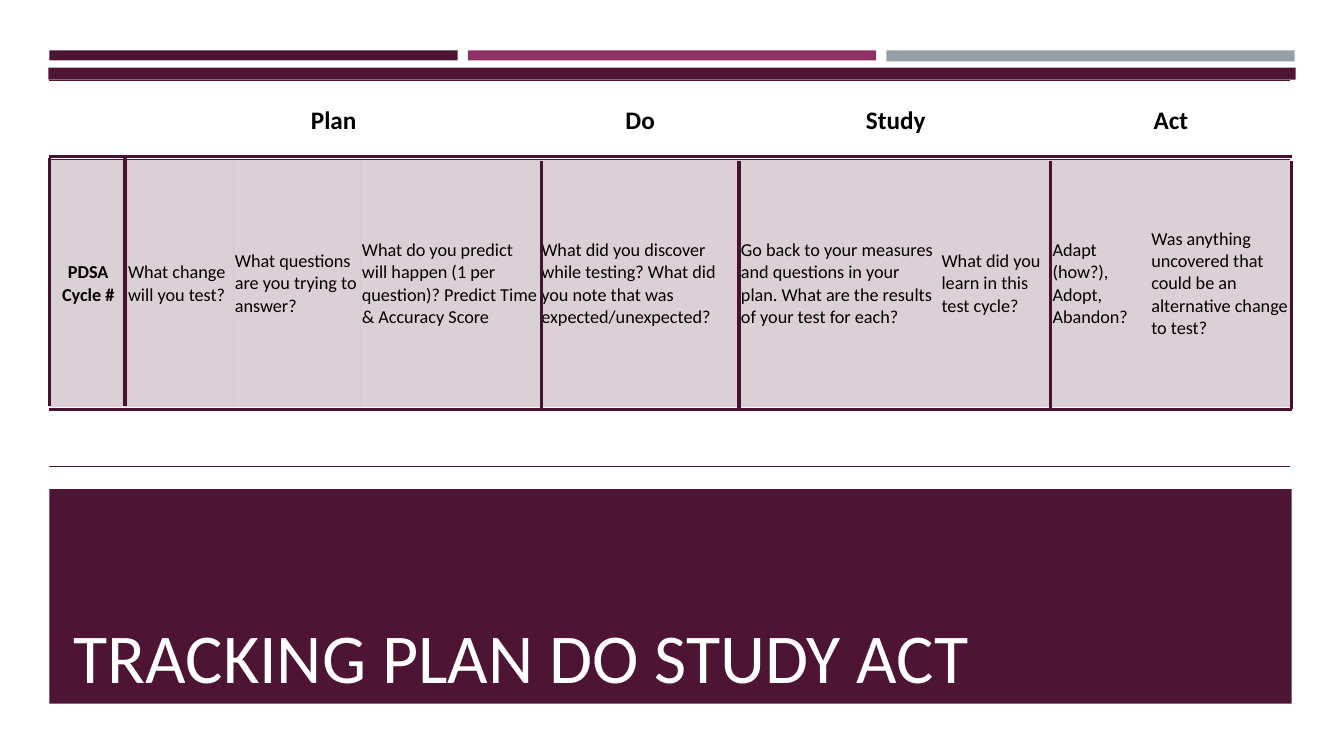
"""Build the Plan Do Study Act tracking slide."""
from typing import Any, NamedTuple

from lxml import etree
from pptx import Presentation
from pptx import util as u
from pptx.dml.color import RGBColor
from pptx.enum import shapes, text
from pptx.oxml.ns import qn

PLUM = RGBColor(0x4D, 0x14, 0x34)
RULE = RGBColor(0x45, 0x12, 0x2F)
BERRY = RGBColor(0x90, 0x31, 0x63)
GREY = RGBColor(0x96, 0x9F, 0xA7)
WHITE = RGBColor(0xFF, 0xFF, 0xFF)
BLACK = RGBColor(0, 0, 0)
FONT = "Calibri"
NO_STYLE = "{2D5ABB26-0587-4C30-8999-92F81FD0307C}"
LEFT, RIGHT = 0.49, 12.81


class Block(NamedTuple):
    x: float
    y: float
    w: float
    h: float
    color: RGBColor


class Rule(NamedTuple):
    x1: float
    y1: float
    x2: float
    y2: float


class Stage(NamedTuple):
    name: str
    column: int
    span: int


BLOCKS = [
    Block(0.48, 0.67, 12.37, 1.3, PLUM),
    Block(LEFT, 0.5, 4.05, 0.1, PLUM),
    Block(8.79, 0.5, 4.05, 0.11, GREY),
    Block(4.64, 0.5, 4.05, 0.1, BERRY),
    Block(LEFT, 3.37, 12.32, 3.61, PLUM),
    Block(0, 0.79, 13.33, 4.06, WHITE),
]
RULES = [
    *[Rule(x, 1.57, x, 4.03) for x in (LEFT, 1.24)],
    *[Rule(x, 1.6, x, 4.06) for x in (5.37, 7.33, 10.42, RIGHT)],
    *[Rule(RIGHT, y, LEFT, y) for y in (1.55, 4.06)],
]
STAGES = [Stage("Plan", 1, 3), Stage("Do", 4, 1), Stage("Study", 5, 2), Stage("Act", 7, 2)]
QUESTIONS = [
    "PDSA Cycle #",
    "What change will you test?",
    "What questions are you trying to answer?",
    "What do you predict will happen (1 per question)? Predict Time & Accuracy Score",
    "What did you discover while testing? What did you note that was expected/unexpected?",
    "Go back to your measures and questions in your plan. What are the results of your test for each?",
    "What did you learn in this test cycle?",
    "Adapt (how?), Adopt, Abandon?",
    "Was anything uncovered that could be an alternative change to test?",
]
COLUMNS = [0.77, 1.06, 1.26, 1.78, 1.98, 1.99, 1.1, 0.98, 1.39]
ROWS = [0.78, 2.46, 0.59]
BORDERS = {0: ("a:lnB", "a:lnT"), 1: (), 2: ("a:lnB",)}
CELL_FORMAT = {
    "vertical_anchor": text.MSO_ANCHOR.MIDDLE,
    "margin_left": u.Inches(0.01),
    "margin_right": u.Inches(0.01),
    "margin_top": u.Inches(0.01),
    "margin_bottom": 0,
}


def apply(target: Any, values: dict[str, Any]) -> None:
    for name, value in values.items():
        setattr(target, name, value)


def write(p: Any, words: str, size: float, color: RGBColor, bold: bool = False) -> None:
    r = p.add_run()
    r.text = words
    apply(r.font, {"name": FONT, "size": u.Pt(size), "bold": bold})
    r.font.color.rgb = color


def add_block(s: Any, block: Block) -> None:
    sp = s.shapes.add_shape(shapes.MSO_SHAPE.RECTANGLE, *map(u.Inches, block[:4]))
    sp.shadow.inherit = False
    sp.fill.solid()
    sp.fill.fore_color.rgb = block.color
    sp.line.fill.background()


def add_rule(s: Any, rule: Rule) -> None:
    line = s.shapes.add_connector(shapes.MSO_CONNECTOR.STRAIGHT, *map(u.Inches, rule))
    line.line.color.rgb = RULE
    line.line.width = u.Pt(2.25)
    etree.SubElement(line._element.spPr, qn("a:effectLst"))


def add_border(cell: Any, side: str) -> None:
    ln = etree.Element(qn(side), w=str(u.Pt(1)))
    fill = etree.SubElement(ln, qn("a:solidFill"))
    etree.SubElement(fill, qn("a:srgbClr"), val=str(PLUM))
    cell._tc.get_or_add_tcPr().insert(0, ln)


def tint(cell: Any) -> None:
    cell.fill.solid()
    cell.fill.fore_color.rgb = PLUM
    color = cell._tc.tcPr.find(".//" + qn("a:srgbClr"))
    etree.SubElement(color, qn("a:alpha"), val="20000")


def fill_cell(cell: Any, words: str, size: float, bold: bool, centred: bool) -> None:
    p = cell.text_frame.paragraphs[0]
    p.alignment = text.PP_ALIGN.CENTER if centred else text.PP_ALIGN.LEFT
    write(p, words, size, BLACK, bold)


def add_tracker(s: Any) -> None:
    box = map(u.Inches, (LEFT, 0.8, sum(COLUMNS), sum(ROWS)))
    table = s.shapes.add_table(len(ROWS), len(COLUMNS), *box).table
    apply(table, {"first_row": False, "horz_banding": False})
    table._tbl.tblPr.find(qn("a:tableStyleId")).text = NO_STYLE
    for column, width in zip(table.columns, COLUMNS):
        column.width = u.Inches(width)
    for i, height in enumerate(ROWS):
        table.rows[i].height = u.Inches(height)
        for cell in table.rows[i].cells:
            apply(cell, CELL_FORMAT)
            if i == 1:
                tint(cell)
            else:
                cell.fill.background()
            for side in BORDERS[i]:
                add_border(cell, side)
    for stage in STAGES:
        cell = table.cell(0, stage.column)
        if stage.span > 1:
            cell.merge(table.cell(0, stage.column + stage.span - 1))
        fill_cell(cell, stage.name, 18, True, True)
    for j, question in enumerate(QUESTIONS):
        fill_cell(table.cell(1, j), question, 13, j == 0, j == 0)


def place_title(s: Any) -> None:
    sp = s.shapes.title
    s.shapes._spTree.append(sp._element)
    apply(sp, dict(zip(("left", "top", "width", "height"), map(u.Inches, (0.63, 5.81, 12.02, 1.17)))))
    tf = sp.text_frame
    apply(tf, {
        "vertical_anchor": text.MSO_ANCHOR.BOTTOM,
        "auto_size": text.MSO_AUTO_SIZE.NONE,
        "word_wrap": True,
    })
    p = tf.paragraphs[0]
    apply(p, {"alignment": text.PP_ALIGN.LEFT, "space_after": u.Pt(6), "line_spacing": 0.9})
    write(p, "TRACKING PLAN DO STUDY ACT", 50, WHITE)


def main() -> None:
    prs = Presentation()
    apply(prs, {"slide_width": u.Inches(13.33), "slide_height": u.Inches(7.5)})
    s = prs.slides.add_slide(prs.slide_layouts[5])
    for block in BLOCKS:
        add_block(s, block)
    place_title(s)
    add_tracker(s)
    for rule in RULES:
        add_rule(s, rule)
    prs.save("out.pptx")


if __name__ == "__main__":
    main()
